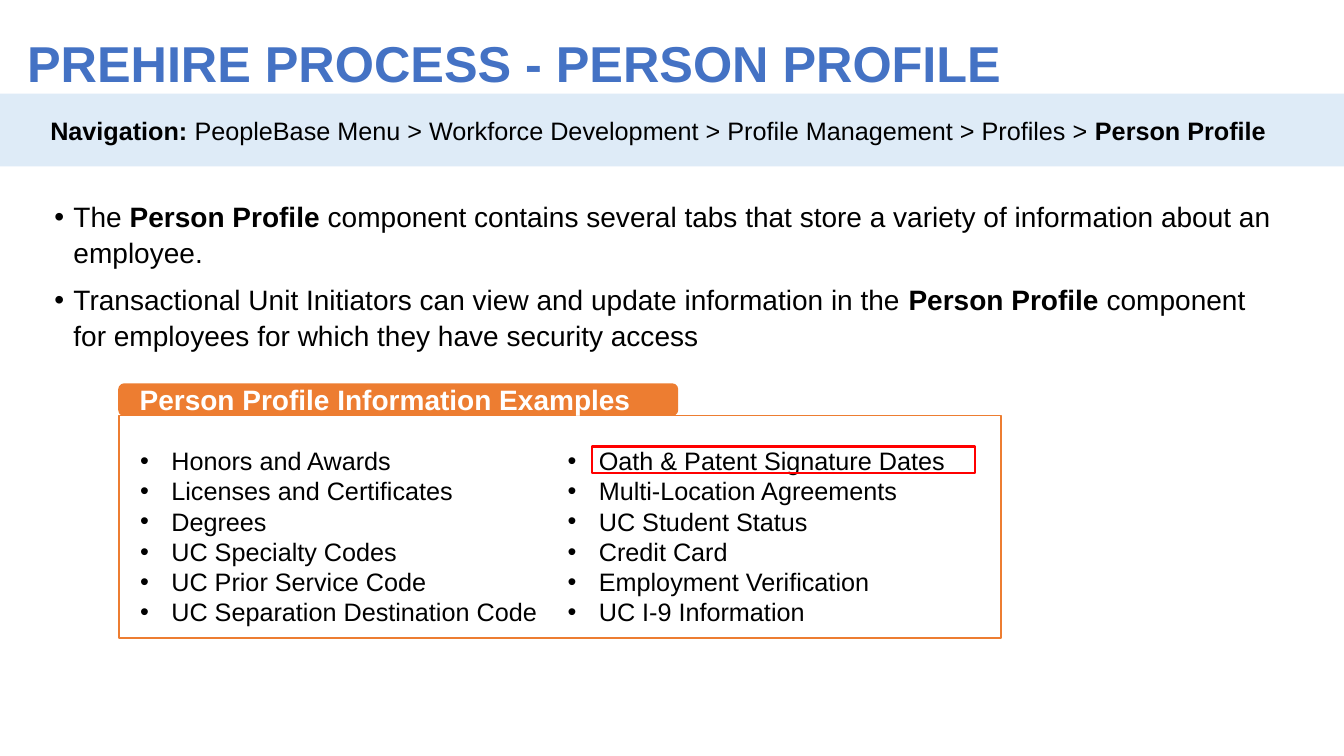
"""Build the Person Profile slide of the prehire process deck."""
import pptx
import pptx.util
import pptx.dml.color
import pptx.enum.shapes
import pptx.enum.text
import pptx.oxml
import pptx.oxml.ns

Inches = pptx.util.Inches
Pt = pptx.util.Pt
SHAPES = pptx.enum.shapes.MSO_SHAPE
MIDDLE = pptx.enum.text.MSO_ANCHOR.MIDDLE

COLORS = {
    "title": "4472C4",
    "band": "DEEBF7",
    "accent": "ED7D31",
    "highlight": "FF0000",
    "text": "000000",
    "white": "FFFFFF",
}

TITLE = [[("PREHIRE PROCESS - PERSON PROFILE", True)]]
NAVIGATION = [[
    ("Navigation: ", True),
    ("PeopleBase Menu > Workforce Development > Profile Management > Profiles > ", False),
    ("Person Profile", True),
]]
OVERVIEW = [
    [
        ("The ", False),
        ("Person Profile ", True),
        ("component contains several tabs that store a variety of information about an employee.", False),
    ],
    [
        ("Transactional Unit Initiators can view and update information in the ", False),
        ("Person Profile ", True),
        ("component for employees for which they have security access", False),
    ],
]
EXAMPLES_HEADING = [[("Person Profile Information Examples", True)]]
EXAMPLE_COLUMNS = [
    (0.37, [
        "Honors and Awards",
        "Licenses and Certificates",
        "Degrees",
        "UC Specialty Codes",
        "UC Prior Service Code",
        "UC Separation Destination Code",
    ]),
    (0.31, [
        "Oath & Patent Signature Dates",
        "Multi-Location Agreements",
        "UC Student Status",
        "Credit Card",
        "Employment Verification",
        "UC I-9 Information",
    ]),
]

SLIDE_WIDTH, SLIDE_HEIGHT = 13.33, 7.5
FRAME_LEFT, FRAME_TOP, FRAME_WIDTH, FRAME_HEIGHT = 1.18, 4.12, 8.75, 2.21
INSET_LEFT, INSET_TOP, INSET_RIGHT, INSET_BOTTOM = 0.15, 0.3, 0.2, 0.25
COLUMN_GAP = 0.2
HEADING_HEIGHT = 0.31


def rgb(name):
    return pptx.dml.color.RGBColor.from_string(COLORS[name])


def add_box(slide, kind, place, fill=None, line=None, line_width=1):
    shape = slide.shapes.add_shape(kind, *map(Inches, place))
    shape.shadow.inherit = False
    if fill:
        shape.fill.solid()
        shape.fill.fore_color.rgb = rgb(fill)
    else:
        shape.fill.background()
    if line:
        shape.line.color.rgb = rgb(line)
        shape.line.width = Pt(line_width)
    else:
        shape.line.fill.background()
    return shape


def set_indent(paragraph, left, hanging):
    properties = paragraph._p.get_or_add_pPr()
    properties.set("marL", str(Inches(left)))
    properties.set("indent", str(-Inches(hanging)))
    if hanging:
        for tag, name, value in (("buFont", "typeface", "Arial"), ("buChar", "char", "•")):
            element = pptx.oxml.parse_xml(f'<a:{tag} {pptx.oxml.ns.nsdecls("a")} {name}="{value}"/>')
            properties.append(element)


def fill_text(shape, paragraphs, size, color="text", left=0, hanging=0,
              spacing=None, after=0, insets=(0.1, 0.05, 0.1, 0.05), anchor=None):
    frame = shape.text_frame
    frame.word_wrap = True
    frame.margin_left, frame.margin_top, frame.margin_right, frame.margin_bottom = map(Inches, insets)
    if anchor is not None:
        frame.vertical_anchor = anchor
    for index, runs in enumerate(paragraphs):
        paragraph = frame.add_paragraph() if index else frame.paragraphs[0]
        paragraph.alignment = pptx.enum.text.PP_ALIGN.LEFT
        paragraph.space_after = Pt(after)
        if spacing:
            paragraph.line_spacing = spacing
        set_indent(paragraph, left, hanging)
        for words, bold in runs:
            run = paragraph.add_run()
            run.text = words
            run.font.name = "Arial"
            run.font.size = Pt(size)
            run.font.bold = bold
            run.font.color.rgb = rgb(color)


def add_text(slide, place, paragraphs, size, **style):
    fill_text(slide.shapes.add_textbox(*map(Inches, place)), paragraphs, size, **style)


def add_examples(slide):
    add_box(slide, SHAPES.RECTANGLE, (FRAME_LEFT, FRAME_TOP, FRAME_WIDTH, FRAME_HEIGHT), "white", "accent")
    column_width = (FRAME_WIDTH - INSET_LEFT - INSET_RIGHT - COLUMN_GAP) / 2
    column_height = FRAME_HEIGHT - INSET_TOP - INSET_BOTTOM
    for index, (indent, items) in enumerate(EXAMPLE_COLUMNS):
        column_left = FRAME_LEFT + INSET_LEFT + index * (column_width + COLUMN_GAP)
        add_text(slide, (column_left, FRAME_TOP + INSET_TOP, column_width, column_height),
                 [[(item, False)] for item in items], 18, left=indent, hanging=0.31,
                 spacing=Pt(21.6), insets=(0, 0, 0, 0))
    heading = add_box(slide, SHAPES.ROUNDED_RECTANGLE,
                      (FRAME_LEFT, FRAME_TOP - HEADING_HEIGHT, 5.54, HEADING_HEIGHT), "accent", "accent")
    fill_text(heading, EXAMPLES_HEADING, 20, color="white", after=12,
              insets=(0.19, 0.02, 0.19, 0.02), anchor=MIDDLE)
    add_box(slide, SHAPES.RECTANGLE, (5.87, 4.43, 3.8, 0.26), line="highlight", line_width=1.5)


def main():
    presentation = pptx.Presentation()
    presentation.slide_width = Inches(SLIDE_WIDTH)
    presentation.slide_height = Inches(SLIDE_HEIGHT)
    slide = presentation.slides.add_slide(presentation.slide_layouts[6])
    add_text(slide, (0.17, 0.24, 12.92, 0.75), TITLE, 36, color="title", anchor=MIDDLE)
    add_box(slide, SHAPES.RECTANGLE, (0, 0.93, SLIDE_WIDTH, 0.72), "band")
    add_text(slide, (0.16, 1.09, 12.85, 0.4), NAVIGATION, 18, left=0.24)
    add_text(slide, (0.44, 1.91, 12.39, 1.63), OVERVIEW, 20,
             left=0.19, hanging=0.19, spacing=1.07, after=8)
    add_examples(slide)
    presentation.save("out.pptx")


if __name__ == "__main__":
    main()
